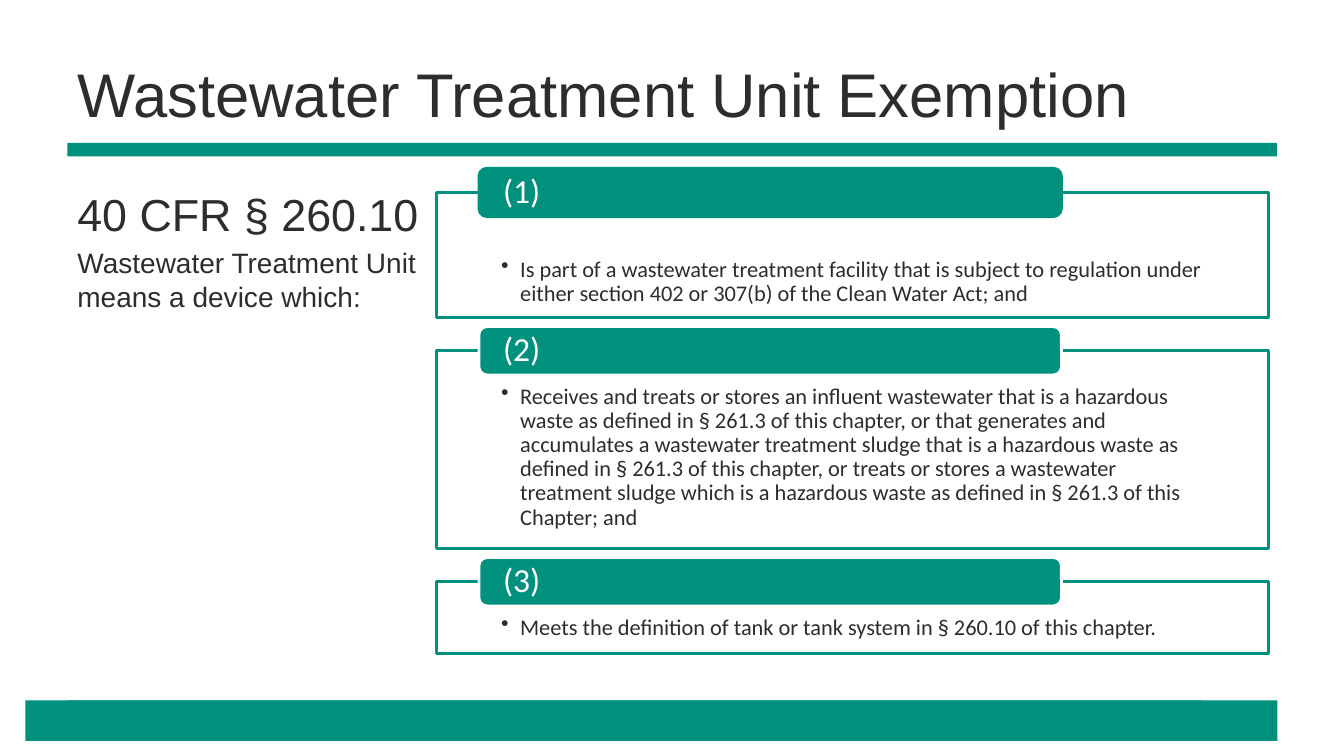
from lxml import etree
from pptx import Presentation
from pptx.dml.color import RGBColor
from pptx.enum.shapes import MSO_SHAPE
from pptx.enum.text import MSO_ANCHOR, PP_ALIGN
from pptx.oxml.ns import qn
from pptx.util import Cm, Pt

RECTANGLE, ROUNDED = MSO_SHAPE.RECTANGLE, MSO_SHAPE.ROUNDED_RECTANGLE
TOP, MIDDLE = MSO_ANCHOR.TOP, MSO_ANCHOR.MIDDLE
LEFT = PP_ALIGN.LEFT

COLORS = {"teal": "00907E", "white": "FFFFFF", "ink": "2D2D2D"}
HEADING_FONT, CARD_FONT = "Arial", "Calibri"


class SlideBuilder:
    def __init__(self, page):
        self.page = page

    def color(self, name):
        return RGBColor.from_string(COLORS[name])

    def shape(self, kind, left, top, width, height, fill, line=None):
        box = self.page.shapes.add_shape(
            kind, Cm(left), Cm(top), Cm(width), Cm(height))
        box.shadow.inherit = False
        box.fill.solid()
        box.fill.fore_color.rgb = self.color(fill)
        if line:
            box.line.color.rgb = self.color(line)
            box.line.width = Pt(2)
        else:
            box.line.fill.background()
        return box

    def frame(self, box, anchor, insets=(0.25, 0.13, 0.25, 0.13)):
        frame = box.text_frame
        frame.word_wrap = True
        frame.vertical_anchor = anchor
        (frame.margin_left, frame.margin_top,
         frame.margin_right, frame.margin_bottom) = map(Cm, insets)
        return frame

    def add_text(self, para, text, size, font=HEADING_FONT, color="ink"):
        para.alignment = LEFT
        span = para.add_run()
        span.text = text
        span.font.size = Pt(size)
        span.font.name = font
        span.font.color.rgb = self.color(color)

    def text_box(self, left, top, width, height, lines, anchor=TOP):
        box = self.page.shapes.add_textbox(
            Cm(left), Cm(top), Cm(width), Cm(height))
        frame = self.frame(box, anchor)
        for index, (text, size) in enumerate(lines):
            para = frame.add_paragraph() if index else frame.paragraphs[0]
            if index:
                para.space_before = Pt(size * 0.2)
            self.add_text(para, text, size)

    def card(self, top, height, text, text_inset):
        box = self.shape(RECTANGLE, 11, top, 20.96, height, "white", "teal")
        shade = box.element.spPr.find(
            qn("a:solidFill")).find(qn("a:srgbClr"))
        etree.SubElement(shade, qn("a:alpha"), val="90000")
        frame = self.frame(box, TOP, (1.63, text_inset, 1.63, 0.3))
        para = frame.paragraphs[0]
        para.line_spacing = 0.9
        properties = para._p.get_or_add_pPr()
        properties.set("marL", str(Cm(0.48)))
        properties.set("indent", str(-Cm(0.48)))
        etree.SubElement(properties, qn("a:buChar"), char="•")
        self.add_text(para, text, 16, CARD_FONT)

    def label(self, card_top, text, line):
        box = self.shape(ROUNDED, 12.07, card_top - 0.61, 14.68, 1.22,
                         "teal", line)
        frame = self.frame(box, MIDDLE, (0.55, 0, 0.55, 0))
        frame.paragraphs[0].line_spacing = 0.9
        self.add_text(frame.paragraphs[0], text, 24, CARD_FONT, "white")


# Conditions: height, outline of the label, top inset of the text, wording
CONDITIONS = [
    (3.15, "teal", 1.65,
     "Is part of a wastewater treatment facility that is subject to "
     "regulation under either section 402 or 307(b) of the Clean Water Act; "
     "and"),
    (4.98, "white", 0.86,
     "Receives and treats or stores an influent wastewater that is a "
     "hazardous waste as defined in § 261.3 of this chapter, or that "
     "generates and accumulates a wastewater treatment sludge that is a "
     "hazardous waste as defined in § 261.3 of this chapter, or treats or "
     "stores a wastewater treatment sludge which is a hazardous waste as "
     "defined in § 261.3 of this Chapter; and"),
    (1.8, "white", 0.86,
     "Meets the definition of tank or tank system in § 260.10 of this "
     "chapter."),
]
CARD_GAP = 0.84


def main():
    deck = Presentation()
    deck.slide_width, deck.slide_height = Cm(33.87), Cm(19.05)
    builder = SlideBuilder(deck.slides.add_slide(deck.slide_layouts[6]))

    # Footer bands and title rule
    for band in [(0.64, 17.65, 31.55, 1.02), (1.7, 17.65, 28.58, 1.02),
                 (1.7, 3.6, 30.48, 0.34)]:
        builder.shape(RECTANGLE, *band, "teal")

    # Title and lead-in
    builder.text_box(1.7, 0.76, 30.48, 3.18,
                     [("Wastewater Treatment Unit Exemption", 44)], MIDDLE)
    builder.text_box(1.7, 4.57, 9.32, 6.65, [
        ("40 CFR § 260.10", 32),
        ("Wastewater Treatment Unit means a device which:", 20)])

    # Numbered conditions
    top = 4.85
    for number, (height, line, inset, text) in enumerate(CONDITIONS, 1):
        builder.card(top, height, text, inset)
        builder.label(top, f"({number})", line)
        top += height + CARD_GAP

    deck.save("out.pptx")


if __name__ == "__main__":
    main()
